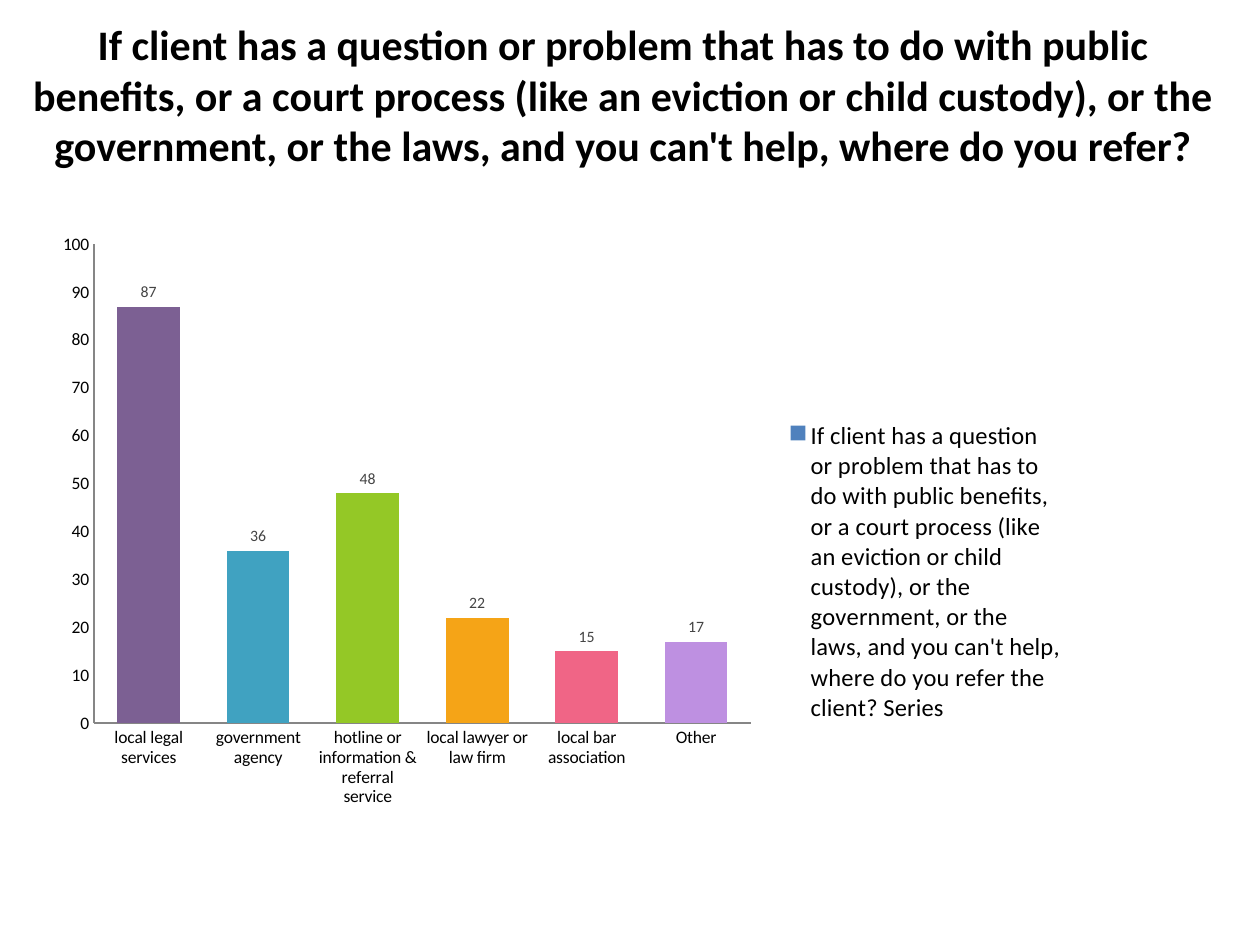
from lxml import etree
from pptx import Presentation
from pptx.chart.data import CategoryChartData
from pptx.dml.color import RGBColor
from pptx.enum.chart import XL_CHART_TYPE, XL_LABEL_POSITION, XL_LEGEND_POSITION, XL_TICK_MARK
from pptx.enum.text import MSO_ANCHOR, PP_ALIGN
from pptx.oxml.ns import qn
from pptx.util import Inches, Pt

COLUMN_CLUSTERED = XL_CHART_TYPE.COLUMN_CLUSTERED
OUTSIDE_END = XL_LABEL_POSITION.OUTSIDE_END
LEGEND_RIGHT = XL_LEGEND_POSITION.RIGHT
NO_TICK = XL_TICK_MARK.NONE
CENTER = PP_ALIGN.CENTER
TOP = MSO_ANCHOR.TOP

FONT_NAME = "Calibri"
BLACK = "000000"
QUESTION = ("If client has a question or problem that has to do with public benefits, "
            "or a court process (like an eviction or child custody), or the government, "
            "or the laws, and you can't help, where do you refer")
REFERRALS = [
    ("local legal services", 87, "7C6093"),
    ("government agency", 36, "40A2C1"),
    ("hotline or information & referral service", 48, "94C826"),
    ("local lawyer or law firm", 22, "F5A417"),
    ("local bar association", 15, "F06586"),
    ("Other", 17, "BE90E1"),
]


def color(hex_string):
    return RGBColor.from_string(hex_string)


def style_font(font, size, hex_string=BLACK, bold=False):
    font.name = FONT_NAME
    font.size = Pt(size)
    font.bold = bold
    font.color.rgb = color(hex_string)


def fill_solid(chart_format, hex_string):
    chart_format.fill.solid()
    chart_format.fill.fore_color.rgb = color(hex_string)


def set_layout(element, index, box, inner=False):
    """Place a chart part by fractions of the chart: left, top, width, height."""
    for old_layout in element.findall(qn("c:layout")):
        element.remove(old_layout)
    layout = etree.Element(qn("c:layout"))
    manual = etree.SubElement(layout, qn("c:manualLayout"))
    settings = [("layoutTarget", "inner")] if inner else []
    settings += [("xMode", "edge"), ("yMode", "edge")]
    settings += zip("xywh", box)
    for tag, value in settings:
        etree.SubElement(manual, qn(f"c:{tag}")).set("val", str(value))
    element.insert(index, layout)


def add_title(slide, left, top, width, height):
    text_frame = slide.shapes.add_textbox(left, top, width, height).text_frame
    text_frame.word_wrap = True
    text_frame.vertical_anchor = TOP
    text_frame.text = QUESTION + "?"
    paragraph = text_frame.paragraphs[0]
    paragraph.alignment = CENTER
    style_font(paragraph.runs[0].font, 24, bold=True)


def style_axis(axis):
    axis.has_major_gridlines = False
    axis.major_tick_mark = NO_TICK
    axis.minor_tick_mark = NO_TICK
    axis.format.line.color.rgb = color("868686")
    axis.format.line.width = Pt(0.75)
    style_font(axis.tick_labels.font, 10)


def add_referral_chart(slide, left, top, width, height):
    chart_data = CategoryChartData()
    chart_data.categories = [name for name, _, _ in REFERRALS]
    chart_data.add_series(QUESTION + " the client? Series", [count for _, count, _ in REFERRALS])
    chart = slide.shapes.add_chart(COLUMN_CLUSTERED, left, top, width, height, chart_data).chart
    chart.has_title = False
    style_font(chart.font, 10)

    style_axis(chart.category_axis)
    style_axis(chart.value_axis)
    chart.value_axis.minimum_scale = 0
    chart.value_axis.maximum_scale = 100
    chart.value_axis.major_unit = 10

    plot = chart.plots[0]
    plot.gap_width = 75
    plot.vary_by_categories = False
    series = plot.series[0]
    fill_solid(series.format, "4F81BD")
    for index, (_, _, hex_string) in enumerate(REFERRALS):
        fill_solid(series.points[index].format, hex_string)
    labels = series.data_labels
    labels.show_value = True
    labels.position = OUTSIDE_END
    style_font(labels.font, 9, "444444")

    chart.has_legend = True
    legend = chart.legend
    legend.position = LEGEND_RIGHT
    legend.include_in_layout = False
    style_font(legend.font, 14)

    plot_area = chart.element.find(".//" + qn("c:plotArea"))
    legend_element = chart.element.find(".//" + qn("c:legend"))
    set_layout(plot_area, 0, (0.03, 0.089, 0.649, 0.652), inner=True)
    set_layout(legend_element, 1, (0.72, 0.32, 0.27, 0.43))


def main():
    presentation = Presentation()
    presentation.slide_width = Inches(10)
    presentation.slide_height = Inches(7.5)
    slide = presentation.slides.add_slide(presentation.slide_layouts[6])
    add_title(slide, Inches(0.1), Inches(0.1), Inches(9.69), Inches(1.31))
    add_referral_chart(slide, Inches(0.5), Inches(1.42), Inches(8.04), Inches(5.83))
    presentation.save("out.pptx")


if __name__ == "__main__":
    main()
